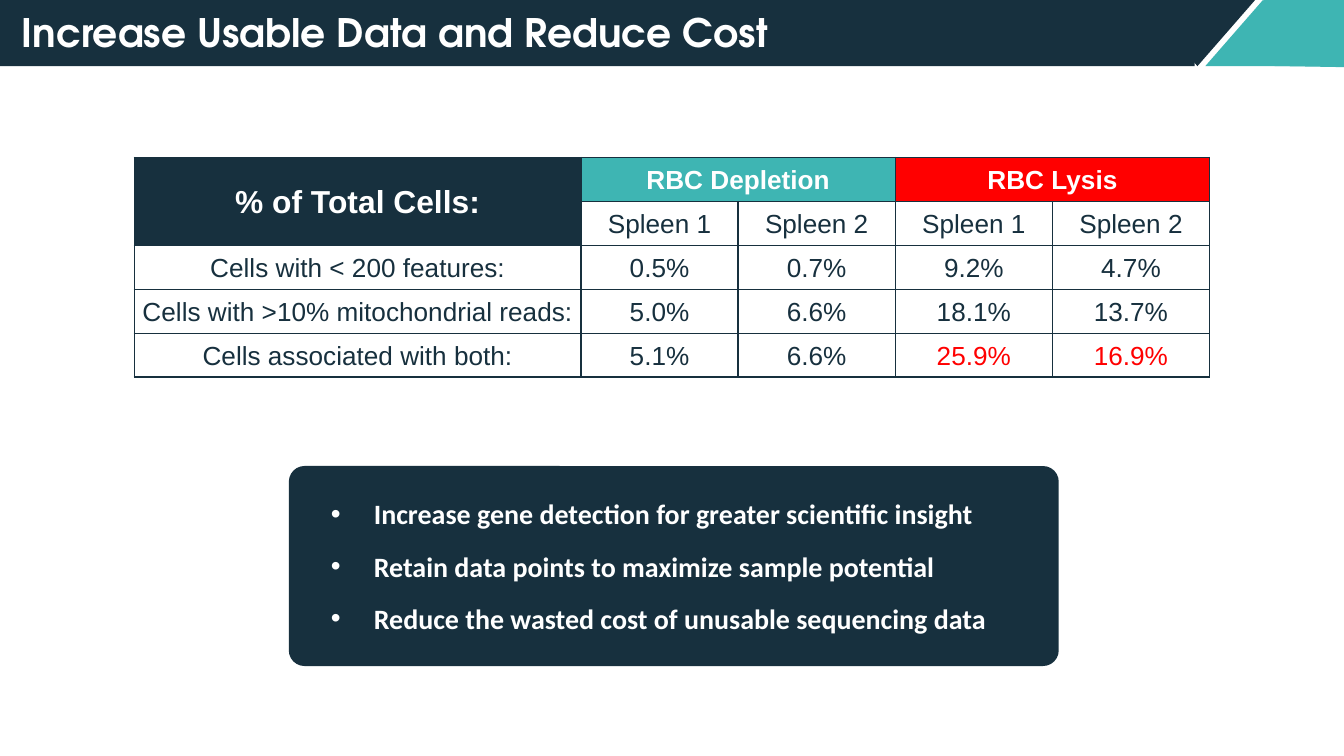
import dataclasses

import lxml.etree
import pptx
import pptx.dml.color
import pptx.enum.shapes
import pptx.enum.text
import pptx.oxml.ns
import pptx.util

Cm = pptx.util.Cm
Pt = pptx.util.Pt
RGB = pptx.dml.color.RGBColor.from_string
Shape = pptx.enum.shapes.MSO_SHAPE
Align = pptx.enum.text.PP_ALIGN
Middle = pptx.enum.text.MSO_ANCHOR.MIDDLE


@dataclasses.dataclass(frozen=True)
class Theme:
    navy: str = "17303E"
    teal: str = "3EB5B3"
    red: str = "FF0000"
    white: str = "FFFFFF"
    title: int = 21
    head: int = 17
    cell: int = 14
    point: int = 15


theme = Theme()


def write(line, text, *, font="Arial", size=theme.cell, color=theme.navy,
          bold=False, align=Align.LEFT, before=0, after=0):
    line.alignment = align
    line.space_before, line.space_after = Pt(before), Pt(after)
    run = line.add_run()
    run.text = text
    run.font.name, run.font.size, run.font.bold = font, Pt(size), bold
    run.font.color.rgb = RGB(color)


def add(parent, tag, **attrs):
    return lxml.etree.SubElement(parent, pptx.oxml.ns.qn(tag), **attrs)


deck = pptx.Presentation()
deck.slide_width, deck.slide_height = Cm(25.4), Cm(14.29)
slide = deck.slides.add_slide(deck.slide_layouts[1])
shapes = slide.shapes
title, panel = slide.placeholders

# Header band with its slanted teal corner
build = shapes.build_freeform(Cm(23.57), Cm(1.24), scale=1.0)
build.add_line_segments([(Cm(x), Cm(y)) for x, y in [(23.88, 0), (25.4, 0), (25.4, 1.27)]])
band = shapes.add_shape(Shape.RECTANGLE, 0, 0, Cm(22.58), Cm(1.25))
corner = build.convert_to_shape()
rise = shapes.add_shape(Shape.ISOSCELES_TRIANGLE, Cm(22.78), 0, Cm(2.18), Cm(1.25))
drop = shapes.add_shape(Shape.ISOSCELES_TRIANGLE, Cm(21.54), 0, Cm(2.18), Cm(1.25))
drop.rotation = 180
for shape, color in [(band, theme.navy), (corner, theme.teal),
                     (rise, theme.teal), (drop, theme.navy)]:
    shape.fill.solid()
    shape.fill.fore_color.rgb = RGB(color)
    shape.line.fill.background()
    shape.shadow.inherit = False

# Title, brought in front of the band
shapes.element.append(title.element)
title.left, title.top, title.width, title.height = Cm(0.23), 0, Cm(16.79), Cm(1.22)
frame = title.text_frame
frame.auto_size = pptx.enum.text.MSO_AUTO_SIZE.NONE
frame.vertical_anchor = Middle
frame.margin_left = frame.margin_right = Cm(0.18)
frame.margin_top = frame.margin_bottom = Cm(0.1)
write(frame.paragraphs[0], "Increase Usable Data and Reduce Cost",
      font="TeX Gyre Adventor", size=theme.title, color=theme.white, bold=True)

# Table
rows = [
    ["% of Total Cells:", "RBC Depletion", "", "RBC Lysis", ""],
    ["", "Spleen 1", "Spleen 2", "Spleen 1", "Spleen 2"],
    ["Cells with < 200 features:", "0.5%", "0.7%", "9.2%", "4.7%"],
    ["Cells with >10% mitochondrial reads:", "5.0%", "6.6%", "18.1%", "13.7%"],
    ["Cells associated with both:", "5.1%", "6.6%", "25.9%", "16.9%"],
]
fills = {(0, 0): theme.navy, (1, 0): theme.navy,
         (0, 1): theme.teal, (0, 2): theme.teal,
         (0, 3): theme.red, (0, 4): theme.red}
alerts = {(4, 3), (4, 4)}
widths = [8.44] + [2.97] * 4
height = 0.83
table = shapes.add_table(len(rows), len(widths), Cm(2.54), Cm(2.98),
                         Cm(sum(widths)), Cm(height * len(rows))).table
table.first_row = table.horz_banding = False
for column, width in zip(table.columns, widths):
    column.width = Cm(width)
for row in table.rows:
    row.height = Cm(height)

for r, row in enumerate(rows):
    for c, text in enumerate(row):
        cell = table.cell(r, c)
        cell.vertical_anchor = Middle
        cell.margin_left = cell.margin_right = cell.margin_top = Cm(0.03)
        cell.margin_bottom = 0
        for side in ("L", "R", "T", "B"):
            edge = add(cell._tc.get_or_add_tcPr(), f"a:ln{side}", w=str(Pt(1)))
            add(add(edge, "a:solidFill"), "a:srgbClr", val=theme.navy)
        cell.fill.solid()
        cell.fill.fore_color.rgb = RGB(fills.get((r, c), theme.white))
        line = cell.text_frame.paragraphs[0]
        line.font.size = Pt(theme.cell)
        if text:
            header = (r, c) in fills
            color = theme.white if header else theme.red if (r, c) in alerts else theme.navy
            write(line, text, size=theme.head if (r, c) == (0, 0) else theme.cell,
                  color=color, bold=header, align=Align.CENTER)

for start, end in [((0, 0), (1, 0)), ((0, 1), (0, 2)), ((0, 3), (0, 4))]:
    table.cell(*start).merge(table.cell(*end))

# Rounded panel of benefits
panel.left, panel.top, panel.width, panel.height = Cm(5.46), Cm(8.81), Cm(14.55), Cm(3.78)
form = add(panel.element.spPr, "a:prstGeom", prst="roundRect")
add(add(form, "a:avLst"), "a:gd", name="adj", fmla="val 7800")
panel.fill.solid()
panel.fill.fore_color.rgb = RGB(theme.navy)
panel.line.fill.background()
frame = panel.text_frame
frame.auto_size = pptx.enum.text.MSO_AUTO_SIZE.NONE
frame.vertical_anchor = Middle
frame.margin_left = frame.margin_right = frame.margin_top = frame.margin_bottom = Cm(0.25)
points = [
    "Increase gene detection for greater scientific insight",
    "Retain data points to maximize sample potential",
    "Reduce the wasted cost of unusable sequencing data",
]
for i, text in enumerate(points):
    line = frame.add_paragraph() if i else frame.paragraphs[0]
    props = line._p.get_or_add_pPr()
    props.set("marL", str(Cm(1.27)))
    props.set("indent", str(-Cm(0.81)))
    add(add(props, "a:buClr"), "a:srgbClr", val=theme.white)
    add(props, "a:buChar", char="•")
    write(line, text, font="Calibri", size=theme.point, color=theme.white, bold=True,
          before=10 if i else 0, after=10 if text == points[-1] else 0)

deck.save("out.pptx")
